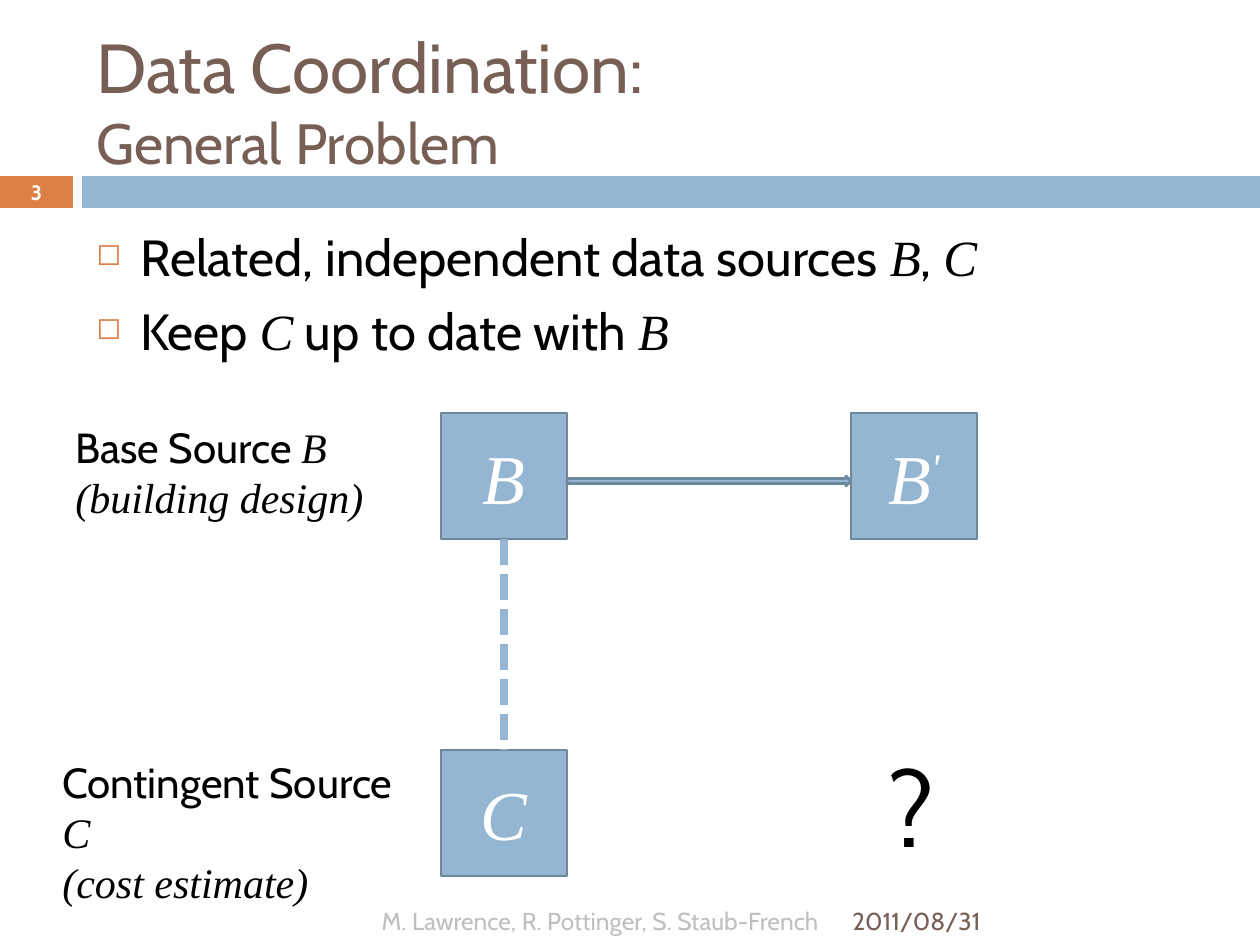
from lxml import etree
from pptx import Presentation
from pptx.dml.color import RGBColor
from pptx.enum.dml import MSO_LINE
from pptx.enum.shapes import MSO_CONNECTOR, MSO_SHAPE
from pptx.enum.text import MSO_ANCHOR, PP_ALIGN
from pptx.oxml.ns import qn
from pptx.util import Pt

RECTANGLE, RIGHT_ARROW = MSO_SHAPE.RECTANGLE, MSO_SHAPE.RIGHT_ARROW
STRAIGHT, DASH = MSO_CONNECTOR.STRAIGHT, MSO_LINE.SQUARE_DOT
TOP, MIDDLE = MSO_ANCHOR.TOP, MSO_ANCHOR.MIDDLE
LEFT, CENTER, RIGHT = PP_ALIGN.LEFT, PP_ALIGN.CENTER, PP_ALIGN.RIGHT
TOP_SIDE, BOTTOM_SIDE = 0, 2

SANS, SERIF = "Cabin", "Times New Roman"
BLUE, EDGE, ORANGE, BROWN = "94B6D2", "6D879B", "DD8047", "775F55"
BLACK, WHITE, GRAY = "000000", "FFFFFF", "BFBFBF"
EMU_PER_PX = 914400 / 126

# Content: a run is (text, is_math); math is set in italic serif
TITLE = [("Data Coordination:", 39.6), ("General Problem", 32.4)]
BULLETS = [
    [("Related, independent data sources ", False), ("B", True), (", ", False), ("C", True)],
    [("Keep ", False), ("C", True), (" up to date with ", False), ("B", True)],
]
BANDS = [((0, 176, 73, 32), ORANGE), ((82, 176, 1178, 32), BLUE)]
BOX = 126
BOXES = {"B": (441, 413), "C": (441, 750), "B'": (851, 413)}
# (box, paragraphs, wraps)
LABELS = [
    ((63, 415, 316, 115), [[("Base Source ", False), ("B", True)], [("(building design)", True)]], False),
    ((50, 750, 379, 115), [[("Contingent Source ", False), ("C", True)], [("(cost estimate)", True)]], True),
]
QUESTION = ((876, 736, 74, 140), "?")
# (box, text, size, colour, alignment, bold)
FOOTERS = [
    ((840, 896, 368, 50), "2011/08/31", 14, BROWN, LEFT, False),
    ((0, 175, 73, 34), "3", 11.9, WHITE, CENTER, True),
    ((84, 896, 747, 50), "M. Lawrence, R. Pottinger, S. Staub-French", 14, GRAY, RIGHT, False),
]


def px(value):
    return round(value * EMU_PER_PX)


def color(hex_string):
    return RGBColor.from_string(hex_string)


def add_run(paragraph, text, size, hex_color, math=False, bold=False):
    run = paragraph.add_run()
    run.text = text
    font = run.font
    font.name = SERIF if math else SANS
    font.size, font.italic, font.bold = Pt(size), math, bold
    font.color.rgb = color(hex_color)
    return run


def add_text(slide, box, paragraphs, size, hex_color, anchor=TOP, align=LEFT, wrap=True, bold=False):
    frame = slide.shapes.add_textbox(*map(px, box)).text_frame
    frame.word_wrap = wrap
    frame.vertical_anchor = anchor
    for index, runs in enumerate(paragraphs):
        paragraph = frame.add_paragraph() if index else frame.paragraphs[0]
        paragraph.alignment = align
        for text, math in runs:
            add_run(paragraph, text, size, hex_color, math, bold)
    return frame


def add_filled(slide, kind, box, fill, edge=None):
    shape = slide.shapes.add_shape(kind, *map(px, box))
    shape.shadow.inherit = False
    shape.fill.solid()
    shape.fill.fore_color.rgb = color(fill)
    if edge:
        shape.line.color.rgb = color(edge)
        shape.line.width = Pt(1.5)
    else:
        shape.line.fill.background()
    return shape


def add_bullet(paragraph):
    properties = paragraph._p.get_or_add_pPr()
    properties.set("marL", str(px(44)))
    properties.set("indent", str(-px(44)))
    bullet_color = etree.SubElement(properties, qn("a:buClr"))
    etree.SubElement(bullet_color, qn("a:srgbClr"), val=ORANGE)
    etree.SubElement(properties, qn("a:buSzPct"), val="60000")
    etree.SubElement(properties, qn("a:buChar"), char="◻")


def main():
    presentation = Presentation()
    presentation.slide_width, presentation.slide_height = px(1260), px(945)
    slide = presentation.slides.add_slide(presentation.slide_layouts[6])

    # Bands under the title
    for box, fill in BANDS:
        add_filled(slide, RECTANGLE, box, fill)

    # Title
    frame = add_text(slide, (84, 32, 1124, 136), [[]], 40, BROWN, MIDDLE)
    paragraph = frame.paragraphs[0]
    for index, (text, size) in enumerate(TITLE):
        if index:
            paragraph.add_line_break()
        add_run(paragraph, text, size, BROWN)

    # Bullets
    frame = add_text(slide, (84, 220, 1124, 620), BULLETS, 29, BLACK)
    for paragraph in frame.paragraphs:
        paragraph.space_before = Pt(7)
        add_bullet(paragraph)

    # Source boxes
    boxes = {}
    for name, (left, top) in BOXES.items():
        shape = add_filled(slide, RECTANGLE, (left, top, BOX, BOX), BLUE, EDGE)
        shape.text_frame.vertical_anchor = MIDDLE
        paragraph = shape.text_frame.paragraphs[0]
        paragraph.alignment = CENTER
        add_run(paragraph, name[0], 40, WHITE, math=True)
        if name[1:]:
            prime = add_run(paragraph, name[1:], 40, WHITE, math=True)
            prime.font._element.set("baseline", "30000")
        boxes[name] = shape

    # Dashed link from B to C
    link = slide.shapes.add_connector(STRAIGHT, 0, 0, 0, 0)
    link.begin_connect(boxes["B"], BOTTOM_SIDE)
    link.end_connect(boxes["C"], TOP_SIDE)
    link.line.color.rgb = color(BLUE)
    link.line.width = Pt(5)
    link.line.dash_style = DASH
    etree.SubElement(link._element.spPr, qn("a:effectLst"))

    # Arrow from B to B'
    start = BOXES["B"][0] + BOX
    add_filled(slide, RIGHT_ARROW, (start, 476, BOXES["B'"][0] - start, 10), BLUE, EDGE)

    # Labels and question mark
    for box, paragraphs, wrap in LABELS:
        add_text(slide, box, paragraphs, 24, BLACK, wrap=wrap)
    box, text = QUESTION
    add_text(slide, box, [[(text, False)]], 60, BLACK, wrap=False)

    # Date, slide number and authors
    for box, text, size, hex_color, align, bold in FOOTERS:
        add_text(slide, box, [[(text, False)]], size, hex_color, MIDDLE, align, bold=bold)

    presentation.save("out.pptx")


if __name__ == "__main__":
    main()
